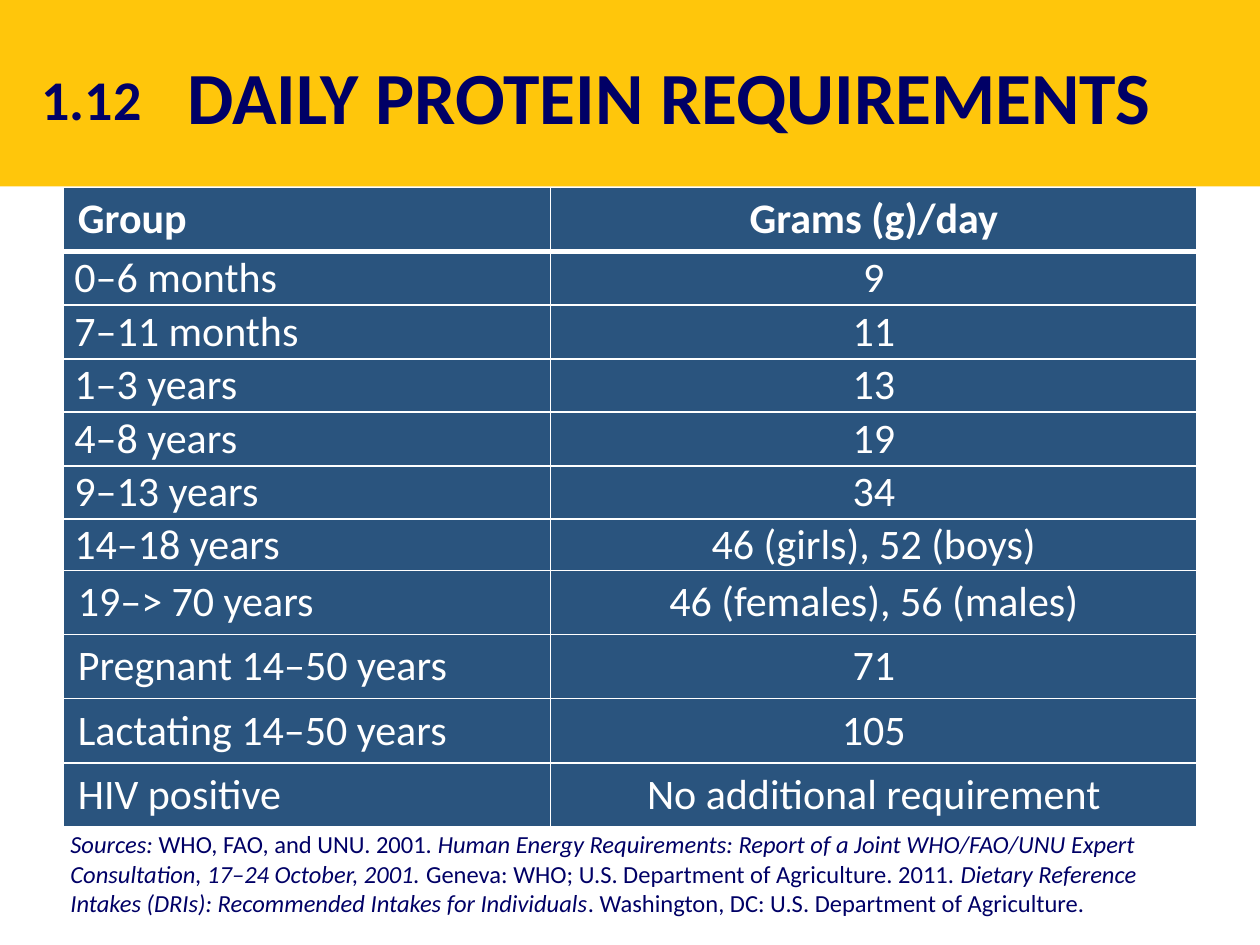
from pptx import Presentation
from pptx.dml.color import RGBColor
from pptx.enum.shapes import MSO_SHAPE
from pptx.enum.text import MSO_ANCHOR, MSO_AUTO_SIZE, PP_ALIGN
from pptx.oxml import parse_xml
from pptx.oxml.ns import nsdecls
from pptx.util import Cm, Pt

NAVY, WHITE, BLUE, GOLD = "000066", "FFFFFF", "2A547E", "FFC60B"

ROWS = [
    ("Group", "Grams (g)/day"),
    ("0–6 months", "9"),
    ("7–11 months", "11"),
    ("1–3 years", "13"),
    ("4–8 years", "19"),
    ("9–13 years", "34"),
    ("14–18 years", "46 (girls), 52 (boys)"),
    ("19–> 70 years", "46 (females), 56 (males)"),
    ("Pregnant 14–50 years", "71"),
    ("Lactating 14–50 years", "105"),
    ("HIV positive", "No additional requirement"),
]
ROW_HEIGHTS = [1.12, 1.07, 1.09, 1.07, 1.09, 1.07, 0.99, 1.04, 1.12, 1.12, 1.27]
COLUMN_WIDTHS = [9.83, 13.03]
FIRST_ADULT_ROW = 7

SOURCES = [
    ("Sources:", True),
    (" WHO, FAO, and UNU. 2001. ", False),
    ("Human Energy Requirements: Report of a Joint WHO/FAO/UNU Expert "
     "Consultation, 17–24 October, 2001. ", True),
    ("Geneva: WHO; U.S. Department of Agriculture. 2011. ", False),
    ("Dietary Reference Intakes (DRIs): Recommended Intakes for Individuals", True),
    (". Washington, DC: U.S. Department of Agriculture.", False),
]


def rgb(value):
    return RGBColor.from_string(value)


def add_run(p, text, color=NAVY, **formats):
    r = p.add_run()
    r.text = text
    r.font.color.rgb = rgb(color)
    for name, value in {"name": "Calibri", **formats}.items():
        setattr(r.font, name, value)


def add_band(s):
    """Gold band across the top, behind everything else."""
    sp = s.shapes.add_shape(MSO_SHAPE.RECTANGLE, 0, 0, Cm(25.4), Cm(3.76))
    sp.shadow.inherit = False
    sp.fill.solid()
    sp.fill.fore_color.rgb = rgb(GOLD)
    sp.line.fill.background()
    s.shapes._spTree.insert(2, sp._element)


def set_title(s, text):
    sp = s.shapes.title
    sp.left, sp.top, sp.width, sp.height = Cm(3.53), Cm(0.91), Cm(22.63), Cm(1.52)
    tf = sp.text_frame
    tf.vertical_anchor = MSO_ANCHOR.TOP
    tf.auto_size = MSO_AUTO_SIZE.NONE
    p = tf.paragraphs[0]
    p.alignment = PP_ALIGN.LEFT
    add_run(p, text, size=Pt(42), bold=True)


def add_text(s, left, top, width, height, wrap=True):
    """Add an empty text box and return its first paragraph."""
    tf = s.shapes.add_textbox(Cm(left), Cm(top), Cm(width), Cm(height)).text_frame
    tf.word_wrap = wrap
    tf.auto_size = MSO_AUTO_SIZE.SHAPE_TO_FIT_TEXT
    return tf.paragraphs[0]


def set_borders(cell, **widths):
    """Draw white borders, 1 pt wide unless a side is given another width."""
    tcPr = cell._tc.get_or_add_tcPr()
    for side in "LRTB":
        tcPr.append(parse_xml(
            f'<a:ln{side} {nsdecls("a")} w="{Pt(widths.get(side, 1))}">'
            f'<a:solidFill><a:srgbClr val="{WHITE}"/></a:solidFill></a:ln{side}>'))


def format_cell(cell, text, row, col):
    roomy = row == 0 or (row >= FIRST_ADULT_ROW and col == 0)
    side, edge = (0.3, 0.13) if roomy else (0.23, 0)
    formats = {
        "margin_left": Cm(side), "margin_right": Cm(side),
        "margin_top": Cm(edge), "margin_bottom": Cm(edge),
        "vertical_anchor": MSO_ANCHOR.MIDDLE,
    }
    for name, value in formats.items():
        setattr(cell, name, value)
    set_borders(cell, **{0: {"B": 3}, 1: {"T": 3}}.get(row, {}))
    cell.fill.solid()
    cell.fill.fore_color.rgb = rgb(BLUE)
    p = cell.text_frame.paragraphs[0]
    p.alignment = PP_ALIGN.CENTER if col else PP_ALIGN.LEFT
    add_run(p, text, WHITE, size=Pt(24), bold=row == 0)


def add_protein_table(s):
    table = s.shapes.add_table(len(ROWS), len(COLUMN_WIDTHS), Cm(1.27), Cm(3.78),
                               Cm(sum(COLUMN_WIDTHS)), Cm(sum(ROW_HEIGHTS))).table
    for column, width in zip(table.columns, COLUMN_WIDTHS):
        column.width = Cm(width)
    for i, (height, texts) in enumerate(zip(ROW_HEIGHTS, ROWS)):
        table.rows[i].height = Cm(height)
        for j, text in enumerate(texts):
            format_cell(table.cell(i, j), text, i, j)


def main():
    prs = Presentation()
    prs.slide_width, prs.slide_height = Cm(25.4), Cm(19.05)
    s = prs.slides.add_slide(prs.slide_layouts[5])
    add_band(s)
    set_title(s, "DAILY PROTEIN REQUIREMENTS")
    add_protein_table(s)

    p = add_text(s, 1.17, 16.59, 23.42, 2.06)
    for text, italic in SOURCES:
        add_run(p, text, size=Pt(14), italic=italic)

    p = add_text(s, 0.58, 1.17, 2.54, 1.63, wrap=False)
    p.alignment = PP_ALIGN.CENTER
    add_run(p, "1.12", size=Pt(32), bold=True)
    prs.save("out.pptx")


if __name__ == "__main__":
    main()
